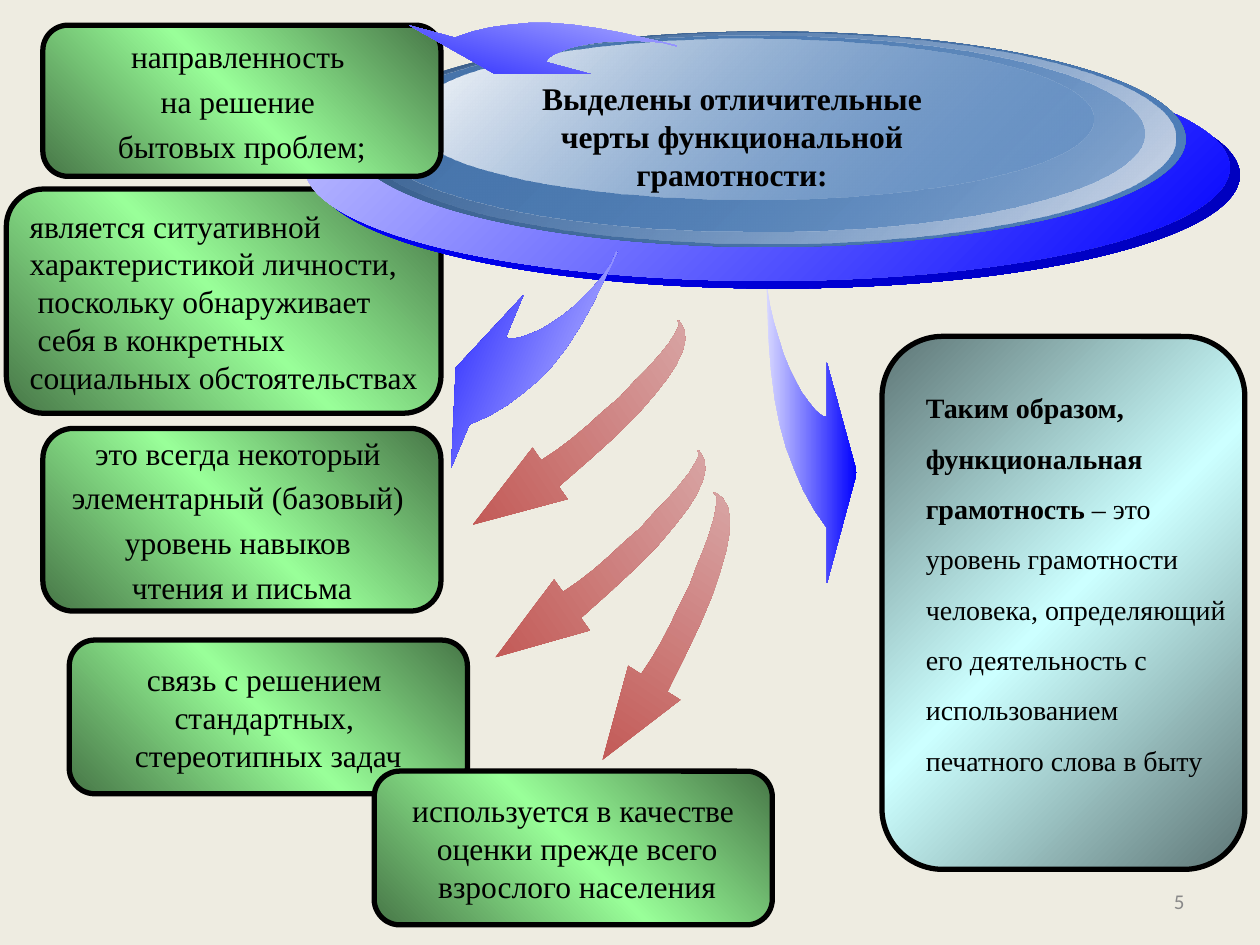
from math import cos, sin, radians
from lxml.etree import SubElement
from pptx import Presentation
from pptx.dml.color import RGBColor
from pptx.enum.shapes import MSO_SHAPE
from pptx.enum.text import MSO_ANCHOR, MSO_AUTO_SIZE, PP_ALIGN
from pptx.oxml.ns import qn
from pptx.util import Inches, Pt

SERIF = "Times New Roman"
GREEN = [(0, "477647"), (50, "99FF99"), (100, "477647")]
TEAL = [(0, "5E7676"), (50, "CCFFFF"), (100, "5E7676")]
RED = [(0, "C0504D"), (100, "DAADAC")]
BLUE = [(0, "0000FF"), (100, "D8D8FF")]

TITLE = "Выделены отличительные черты функциональной грамотности:"
SUMMARY = [
    ("Таким образом, функциональная грамотность ", True),
    ("– это уровень грамотности человека, определяющий его деятельность "
     "с использованием печатного слова в быту", False),
]
CARDS = {
    "context": ((0.05, 1.5, 3.45, 1.78), PP_ALIGN.LEFT, 0, [
        "является ситуативной", "характеристикой личности,",
        " поскольку обнаруживает", " себя в конкретных",
        "социальных обстоятельствах"]),
    "daily": ((0.34, 0.2, 3.16, 1.2), PP_ALIGN.CENTER, 4, [
        "направленность ", "на решение ", "бытовых проблем;"]),
    "tasks": ((0.55, 5.08, 3.16, 1.22), PP_ALIGN.CENTER, 0, [
        "связь с решением ", "стандартных, ", "стереотипных задач"]),
    "basic": ((0.34, 3.4, 3.16, 1.45), PP_ALIGN.CENTER, 4, [
        "это всегда некоторый ", "элементарный (базовый) ",
        "уровень навыков ", "чтения и письма"]),
    "adults": ((2.97, 6.12, 3.16, 1.22), PP_ALIGN.CENTER, 0, [
        "используется в качестве", " оценки прежде всего",
        " взрослого населения"]),
}
RINGS = [
    ((2.5, 0.49, 7.34, 1.8), [(0, "0000FF"), (100, "0000BA")]),
    ((2.42, 0.43, 7.34, 1.8), [(0, "C6C6FF"), (100, "0000FF")]),
    ((2.77, 0.25, 6.64, 1.71), [(0, "395C87"), (100, "4F81BD")]),
    ((2.85, 0.26, 6.48, 1.67), [(0, "4F81BD", 0), (100, "D7DEEB")]),
    ((2.92, 0.28, 6.16, 1.56), [(0, "4775AB"), (100, "4F81BD", 48)]),
    ((3.25, 0.31, 5.43, 1.27), [(0, "FFFFFF"), (100, "4F81BD", 38)]),
]
SLIM = [
    (5.38, 2.54), (5.42, 2.61), (5.43, 2.69), (5.41, 2.78), (5.36, 2.89),
    (5.29, 3), (5.18, 3.14), (5.05, 3.29), (4.88, 3.46), (4.67, 3.65),
    (4.43, 3.86), (4.5, 3.96), (3.75, 4.16), (4.22, 3.55), (4.29, 3.65),
    (4.41, 3.57), (4.53, 3.48), (4.66, 3.37), (4.78, 3.26), (4.91, 3.15),
    (5.02, 3.03), (5.13, 2.92), (5.22, 2.82), (5.3, 2.72), (5.35, 2.64),
    (5.38, 2.58), (5.37, 2.54)]
WIDE = [
    (6.08, 2.17), (6.09, 2.44), (6.1, 2.7), (6.12, 2.94), (6.15, 3.17),
    (6.19, 3.37), (6.24, 3.55), (6.31, 3.73), (6.38, 3.89), (6.47, 4.05),
    (6.57, 4.19), (6.57, 4.63), (6.81, 3.75), (6.57, 2.88), (6.57, 3.31),
    (6.53, 3.3), (6.48, 3.26), (6.43, 3.2), (6.37, 3.12), (6.32, 3.03),
    (6.27, 2.93), (6.22, 2.81), (6.18, 2.68), (6.14, 2.55), (6.11, 2.42),
    (6.09, 2.29), (6.09, 2.17)]


def color(code):
    return RGBColor.from_string(code)


def box(at):
    return [Inches(n) for n in at]


def shade(shape, stops, angle):
    shape.shadow.inherit = False
    shape.fill.gradient()
    shape.fill.gradient_angle = (360 - angle) % 360
    bank = shape.element.spPr.find(qn("a:gradFill")).find(qn("a:gsLst"))
    for old in list(bank):
        bank.remove(old)
    for spot, code, *alpha in stops:
        stop = SubElement(bank, qn("a:gs"), pos=str(spot * 1000))
        tint = SubElement(stop, qn("a:srgbClr"), val=code)
        for part in alpha:
            SubElement(tint, qn("a:alpha"), val=str(part * 1000))


def write(para, text, size=18, bold=False, font=SERIF, code="000000"):
    run = para.add_run()
    run.text = text
    run.font.size = Pt(size)
    run.font.bold = bold
    run.font.name = font
    run.font.color.rgb = color(code)


def panel(at, stops, angle):
    shape = shapes.add_shape(MSO_SHAPE.ROUNDED_RECTANGLE, *box(at))
    shape.adjustments[0] = 0.167
    shade(shape, stops, angle)
    shape.line.color.rgb = color("000000")
    shape.line.width = Pt(3)
    return shape


def card(name):
    at, align, gap, lines = CARDS[name]
    frame = panel(at, GREEN, 315).text_frame
    frame.word_wrap = False
    frame.vertical_anchor = MSO_ANCHOR.MIDDLE
    for i, line in enumerate(lines):
        para = frame.add_paragraph() if i else frame.paragraphs[0]
        para.alignment = align
        para.space_before = Pt(gap)
        write(para, line)


def turn(points, angle):
    c, s = cos(radians(angle)), sin(radians(angle))
    return [(x * c - y * s, x * s + y * c) for x, y in points]


def unit(points, flip=False):
    xs, ys = zip(*points)
    wide, high = max(xs) - min(xs), max(ys) - min(ys)
    fit = [((x - min(xs)) / wide, (y - min(ys)) / high) for x, y in points]
    return [(1 - x, y) for x, y in fit] if flip else fit


def arrow(at, points, stops, angle=0):
    left, top, wide, high = at
    spots = [(Inches(left + x * wide), Inches(top + y * high))
             for x, y in points]
    pen = shapes.build_freeform(*spots[0])
    pen.add_line_segments(spots[1:], close=True)
    shape = pen.convert_to_shape()
    shade(shape, stops, 0)
    shape.line.fill.background()
    shape.rotation = angle


def label(at):
    frame = shapes.add_textbox(*box(at)).text_frame
    frame.word_wrap = True
    return frame


deck = Presentation()
deck.slide_width, deck.slide_height = Inches(10), Inches(7.5)
slide = deck.slides.add_slide(deck.slide_layouts[5])
slide.background.fill.solid()
slide.background.fill.fore_color.rgb = color("EEECE1")
shapes = slide.shapes
slim = unit(turn(SLIM, 360 - 326.2))
wide = unit(WIDE)
back = unit(WIDE, flip=True)
fade = [(0, "D8D8FF"), (100, "0000FF")]

panel((7, 2.67, 2.88, 4.23), TEAL, 45)
card("context")
arrow((3.51, 3.11, 2.26, 0.69), slim, RED, 326.2)
arrow((6.08, 2.17, 0.72, 2.46), wide, fade)
group = shapes.add_group_shape()
for at, stops in RINGS:
    ring = group.shapes.add_shape(MSO_SHAPE.OVAL, *box(at))
    shade(ring, stops, 45)
    ring.line.fill.background()

para = label((7.25, 2.92, 2.63, 3.33)).paragraphs[0]
para.line_spacing = 1.5
for text, bold in SUMMARY:
    write(para, text, 16, bold)
frame = label((7.17, 6.95, 2.33, 0.4))
frame.vertical_anchor = MSO_ANCHOR.MIDDLE
frame.paragraphs[0].alignment = PP_ALIGN.RIGHT
write(frame.paragraphs[0], "5", 12, font="Calibri", code="898989")

card("daily")
arrow((3.7, 1.76, 0.83, 2.09), back, BLUE, 22.7)
card("tasks")
arrow((3.68, 4.15, 2.26, 0.69), slim, RED, 325.4)

title = shapes.title
shapes.element.append(title.element)
title.left, title.top, title.width, title.height = box((4.12, 0.58, 3.38, 1.01))
frame = title.text_frame
frame.word_wrap = True
frame.auto_size = MSO_AUTO_SIZE.NONE
frame.vertical_anchor = MSO_ANCHOR.TOP
frame.paragraphs[0].alignment = PP_ALIGN.CENTER
write(frame.paragraphs[0], TITLE, bold=True)

card("basic")
arrow((3.99, -0.67, 0.59, 2.09), wide, fade, 105)
card("adults")
arrow((4.2, 4.69, 2.26, 0.69), slim, RED, 303.7)
deck.save("out.pptx")
